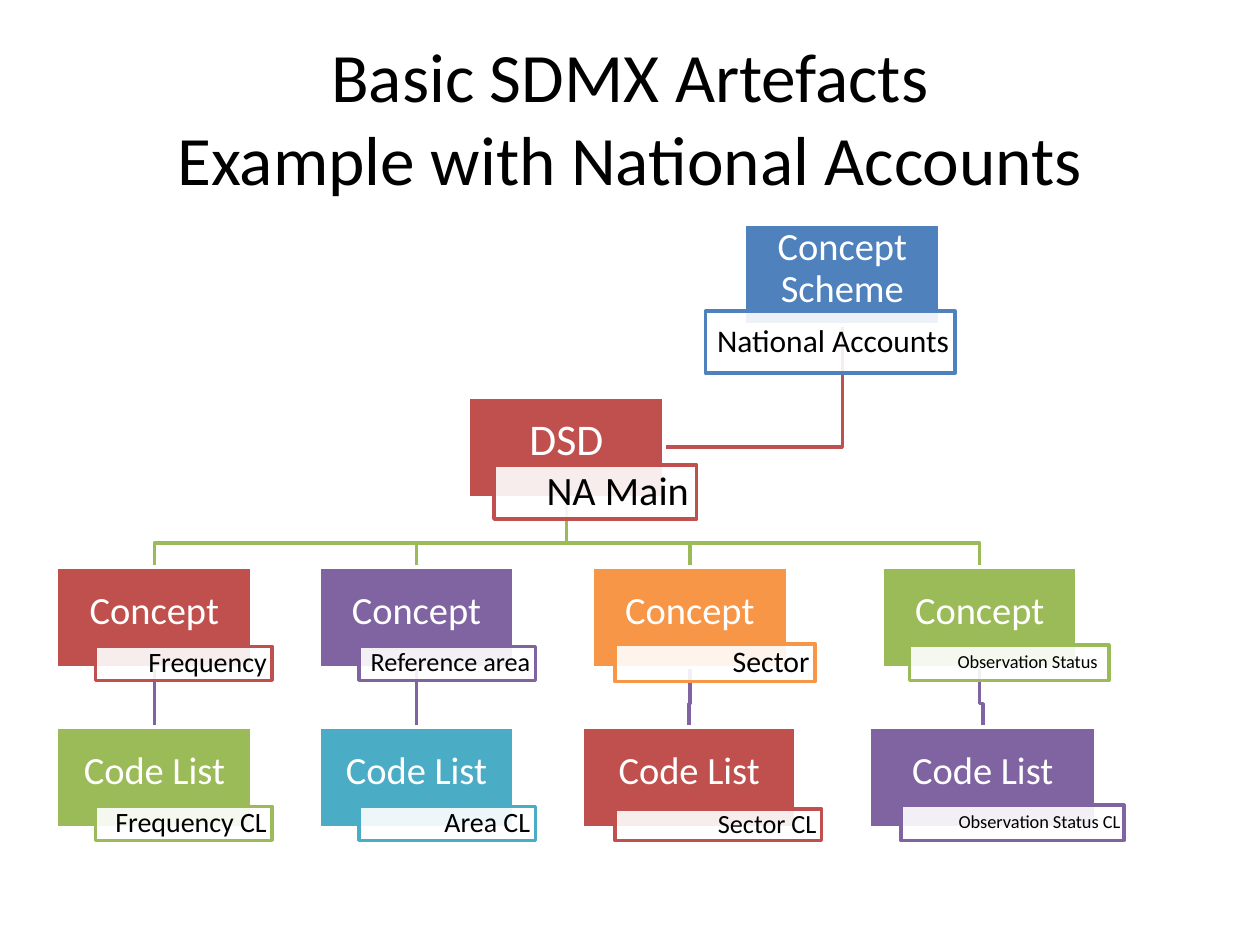
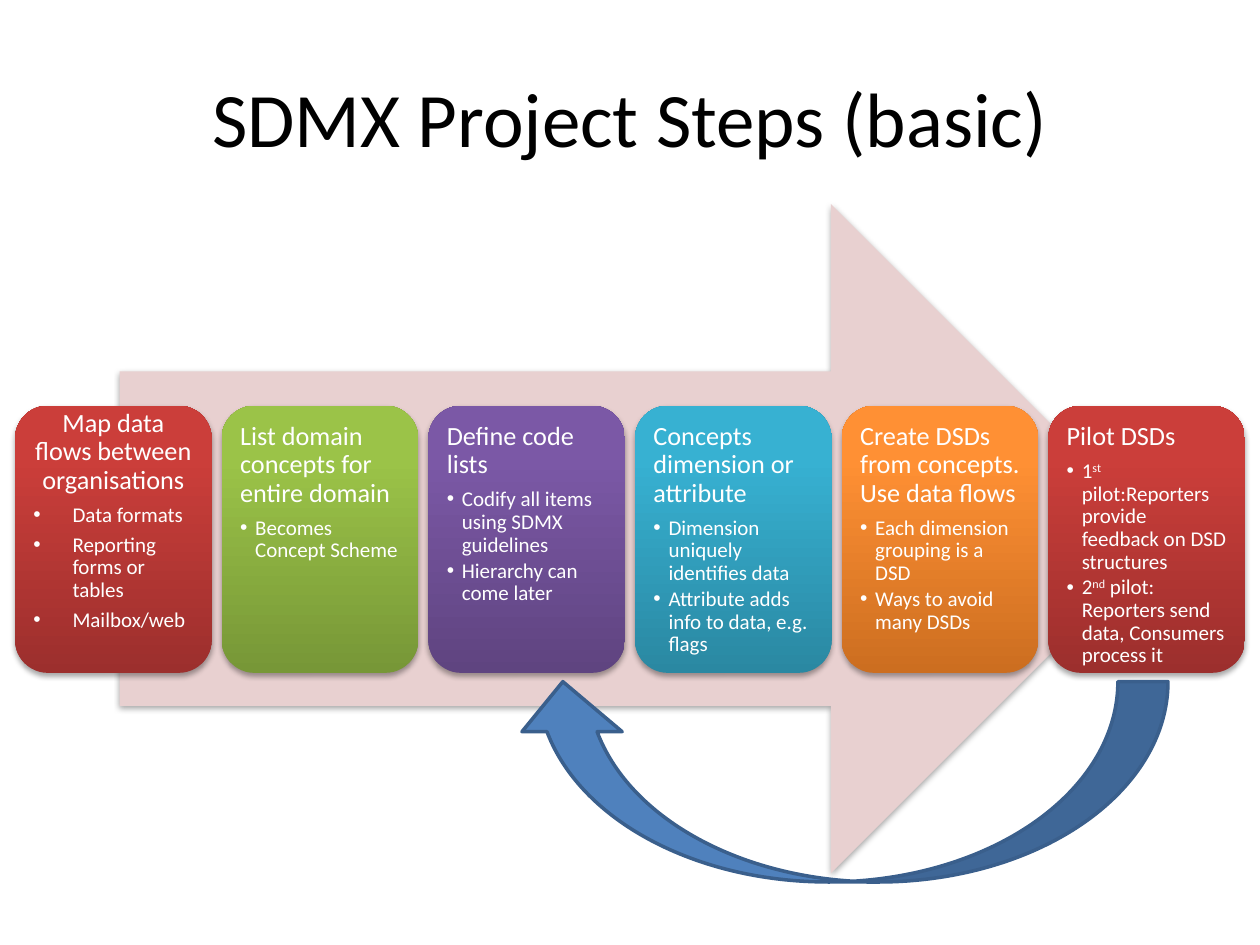
from lxml.etree import SubElement
from pptx import Presentation
from pptx.dml.color import RGBColor
from pptx.enum.shapes import MSO_CONNECTOR as Connector, MSO_SHAPE as Shape
from pptx.enum.text import MSO_ANCHOR as Anchor, PP_ALIGN as Align
from pptx.oxml.ns import qn
from pptx.util import Inches, Pt

FONT = "Calibri"
COLOURS = {
    "black": "000000", "white": "FFFFFF", "blue": "4F81BD", "red": "C0504D",
    "green": "9BBB59", "purple": "8064A2", "teal": "4BACC6", "orange": "F79646",
    "pale red": "E8D0D0", "dark blue": "3A5F8C",
}
# Bottom and top colours of the shaded cards
GRADIENTS = {
    "red": ("9C2F2D", "CB3E3A"), "green": ("779737", "9BC348"),
    "purple": ("5F4480", "7B58A6"), "teal": ("2A88A2", "37B1D2"),
    "orange": ("CC6E20", "FF9034"),
}

# Rows of the artefact tree
BOX_HEIGHT, BOX_WIDTH = 0.8, 1.55
SCHEME_TOP, DSD_TOP, CONCEPT_TOP, CODE_LIST_TOP = 1.78, 3.15, 4.5, 5.77
BUS_TOP = 4.31
DSD_LEFT, SCHEME_LEFT = 3.72, 5.91

# Each column: concept and code list as (colour, box left, box width, name,
# name size, name box (left, top, width, height), right padding)
TREE_COLUMNS = [
    (("red", 0.45, BOX_WIDTH, "Frequency", 16, (0.76, 5.13, 1.4, 0.27), 0),
     ("green", 0.45, BOX_WIDTH, "Frequency CL", 16, (0.76, 6.4, 1.4, 0.27), 0)),
    (("purple", 2.53, BOX_WIDTH, "Reference area", 15, (2.85, 5.13, 1.4, 0.27), 0),
     ("teal", 2.53, BOX_WIDTH, "Area CL", 16, (2.85, 6.4, 1.4, 0.27), 0)),
    (("orange", 4.7, BOX_WIDTH, "Sector", 17, (4.88, 5.11, 1.59, 0.3), 0),
     ("red", 4.62, 1.7, "Sector CL", 15, (4.88, 6.42, 1.64, 0.25), 0)),
    (("green", 7, BOX_WIDTH, "Observation Status", 10.5, (7.22, 5.12, 1.58, 0.28), 0.06),
     ("purple", 6.9, 1.8, "Observation Status CL", 10.5, (7.15, 6.39, 1.77, 0.28), 0)),
]

CARD_LEFT, CARD_TOP, CARD_PITCH, CARD_WIDTH, CARD_HEIGHT = 0.12, 3.22, 1.64, 1.56, 2.12
CARD_SIDE, CARD_INSET = 0.07, 0.06
# A caret switches superscript on and off
STEPS = [
    ("red", "Map data flows between organisations",
     ["Data formats", "Reporting forms or tables", "Mailbox/web"]),
    ("green", "List domain concepts for entire domain", ["Becomes Concept Scheme"]),
    ("purple", "Define code lists",
     ["Codify all items using SDMX guidelines", "Hierarchy can come later"]),
    ("teal", "Concepts dimension or attribute",
     ["Dimension uniquely identifies data", "Attribute adds info to data, e.g. flags"]),
    ("orange", "Create DSDs from concepts. Use data flows",
     ["Each dimension grouping is a DSD", "Ways to avoid many DSDs"]),
    ("red", "Pilot DSDs",
     ["1^st ^pilot:Reporters provide feedback on DSD structures",
      "2^nd^ pilot: Reporters send data, Consumers process it"]),
]


def rgb(name):
    return RGBColor.from_string(COLOURS[name])


def add_run(paragraph, text, size, colour):
    run = paragraph.add_run()
    run.text = text
    run.font.name = FONT
    run.font.size = Pt(size)
    run.font.color.rgb = rgb(colour)
    return run


def write_line(paragraph, text, size, colour, align, gap=0.35):
    """Fill a tight paragraph; gap is the space after it as a share of its size."""
    paragraph.alignment = align
    paragraph.line_spacing = 0.9
    paragraph.space_after = Pt(round(size * gap, 1))
    for index, part in enumerate(text.split("^")):
        run = add_run(paragraph, part, size, colour)
        if index % 2:
            run.font._element.set("baseline", "30000")


def add_bullet(paragraph, indent):
    properties = paragraph._p.get_or_add_pPr()
    properties.set("marL", str(Inches(indent)))
    properties.set("indent", str(-Inches(indent)))
    SubElement(properties, qn("a:buFont")).set("typeface", "Arial")
    SubElement(properties, qn("a:buChar")).set("char", "•")


def prepare_frame(shape, left, top, right, bottom, anchor):
    frame = shape.text_frame
    frame.word_wrap = True
    frame.vertical_anchor = anchor
    frame.margin_left, frame.margin_top = Inches(left), Inches(top)
    frame.margin_right, frame.margin_bottom = Inches(right), Inches(bottom)
    return frame


def add_title(slide, lines, size):
    shape = slide.shapes.add_textbox(Inches(0.5), Inches(0.3), Inches(9), Inches(1.25))
    frame = prepare_frame(shape, 0.1, 0.05, 0.1, 0.05, Anchor.MIDDLE)
    paragraph = frame.paragraphs[0]
    paragraph.alignment = Align.CENTER
    for index, line in enumerate(lines):
        if index:
            paragraph.add_line_break()
        add_run(paragraph, line, size, "black")


def add_figure(slide, kind, area, fill=None, line=None):
    shape = slide.shapes.add_shape(kind, *map(Inches, area))
    shape.shadow.inherit = False
    if fill:
        shape.fill.solid()
        shape.fill.fore_color.rgb = rgb(fill)
    if line:
        shape.line.color.rgb = rgb(line)
        shape.line.width = Pt(2)
    else:
        shape.line.fill.background()
    return shape


def add_soft_shadow(shape):
    effects = shape._element.spPr.find(qn("a:effectLst"))
    shadow = SubElement(effects, qn("a:outerShdw"), blurRad=str(Pt(3.1)),
                        dist=str(Pt(1.8)), dir="5400000", rotWithShape="0")
    colour = SubElement(shadow, qn("a:srgbClr"), val=COLOURS["black"])
    SubElement(colour, qn("a:alpha"), val="35000")


def add_route(slide, colour, *points):
    """Join two points with a connector, or more with one bent open line."""
    start, *others = [tuple(map(Inches, point)) for point in points]
    if len(others) == 1:
        route = slide.shapes.add_connector(Connector.STRAIGHT, *start, *others[0])
    else:
        builder = slide.shapes.build_freeform(*start)
        builder.add_line_segments(others, close=False)
        route = builder.convert_to_shape()
        route.fill.background()
    route.line.color.rgb = rgb(colour)
    route.line.width = Pt(2)
    SubElement(route._element.spPr, qn("a:effectLst"))


def add_artefact(slide, kind, kind_size, top, entry):
    """A coloured box for the kind, overlapped by a see-through name box."""
    colour, left, width, name, name_size, name_area, padding = entry
    box = add_figure(slide, Shape.RECTANGLE, (left, top, width, BOX_HEIGHT), colour, "white")
    frame = prepare_frame(box, 0.02, 0.02, 0.02, 0.11, Anchor.MIDDLE)
    write_line(frame.paragraphs[0], kind, kind_size, "white", Align.CENTER)

    name_box = add_figure(slide, Shape.RECTANGLE, name_area, "white", colour)
    fill_colour = name_box._element.spPr.find(qn("a:solidFill"))[0]
    SubElement(fill_colour, qn("a:alpha"), val="90000")
    side = name_size * 0.0026
    frame = prepare_frame(name_box, side, 0.01, side + padding, 0.01, Anchor.MIDDLE)
    write_line(frame.paragraphs[0], name, name_size, "black", Align.RIGHT)


def add_tree(slide):
    dsd_centre = DSD_LEFT + BOX_WIDTH / 2
    scheme_centre = SCHEME_LEFT + BOX_WIDTH / 2
    dsd_middle = DSD_TOP + BOX_HEIGHT / 2
    concept_bottom = CONCEPT_TOP + BOX_HEIGHT
    link_middle = (concept_bottom + CODE_LIST_TOP) / 2 + 0.05

    for concept, code_list in reversed(TREE_COLUMNS):
        upper, lower = (entry[1] + entry[2] / 2 for entry in (concept, code_list))
        bend = [(upper, link_middle), (lower, link_middle)] if abs(upper - lower) > 0.001 else []
        add_route(slide, "purple", (upper, concept_bottom), *bend, (lower, CODE_LIST_TOP))
        add_route(slide, "green", (dsd_centre, DSD_TOP + BOX_HEIGHT), (dsd_centre, BUS_TOP),
                  (upper, BUS_TOP), (upper, CONCEPT_TOP))
    add_route(slide, "red", (scheme_centre, SCHEME_TOP + BOX_HEIGHT),
              (scheme_centre, dsd_middle), (DSD_LEFT + BOX_WIDTH, dsd_middle))

    add_artefact(slide, "Concept Scheme", 22, SCHEME_TOP,
                 ("blue", SCHEME_LEFT, BOX_WIDTH, "National Accounts", 18,
                  (5.6, 2.47, 1.98, 0.49), 0))
    add_artefact(slide, "DSD", 25, DSD_TOP,
                 ("red", DSD_LEFT, BOX_WIDTH, "NA Main", 23, (3.92, 3.69, 1.61, 0.43), 0))
    for concept, code_list in TREE_COLUMNS:
        add_artefact(slide, "Concept", 22, CONCEPT_TOP, concept)
        add_artefact(slide, "Code List", 22, CODE_LIST_TOP, code_list)


def add_step_card(slide, index, colour, heading, points):
    area = (CARD_LEFT + index * CARD_PITCH, CARD_TOP, CARD_WIDTH, CARD_HEIGHT)
    card = add_figure(slide, Shape.ROUNDED_RECTANGLE, area)
    add_soft_shadow(card)
    card.fill.gradient()
    card.fill.gradient_angle = 90
    for stop, position, shade in zip(card.fill.gradient_stops, (0, 0.8), GRADIENTS[colour]):
        stop.position = position
        stop.color.rgb = RGBColor.from_string(shade)

    if index == 0:
        anchor, align, bottom, indent, gap = Anchor.MIDDLE, Align.CENTER, 0.35, 0.31, 0.35
    else:
        anchor, align, bottom, indent, gap = Anchor.TOP, Align.LEFT, CARD_INSET, 0.12, 0.15
    frame = prepare_frame(card, CARD_SIDE, CARD_INSET, CARD_SIDE, bottom, anchor)
    write_line(frame.paragraphs[0], heading, 15, "white", align)
    for point in points:
        paragraph = frame.add_paragraph()
        write_line(paragraph, point, 12, "white", Align.LEFT, gap)
        add_bullet(paragraph, indent)


def add_steps(slide):
    add_soft_shadow(add_figure(slide, Shape.RIGHT_ARROW, (0.95, 1.62, 8.3, 5.31), "pale red"))
    for index, step in enumerate(STEPS):
        add_step_card(slide, index, *step)
    feedback = add_figure(slide, Shape.CURVED_UP_ARROW, (4.07, 5.41, 5.2, 1.59),
                          "blue", "dark blue")
    feedback._element.spPr.xfrm.set("flipH", "1")


def main():
    presentation = Presentation()
    presentation.slide_width, presentation.slide_height = Inches(10), Inches(7.5)
    blank = presentation.slide_layouts[6]

    artefacts = presentation.slides.add_slide(blank)
    add_title(artefacts, ["Basic SDMX Artefacts", "Example with National Accounts"], 39.6)
    add_tree(artefacts)

    project = presentation.slides.add_slide(blank)
    add_title(project, ["SDMX Project Steps (basic)"], 44)
    add_steps(project)

    presentation.save("out.pptx")


if __name__ == "__main__":
    main()
